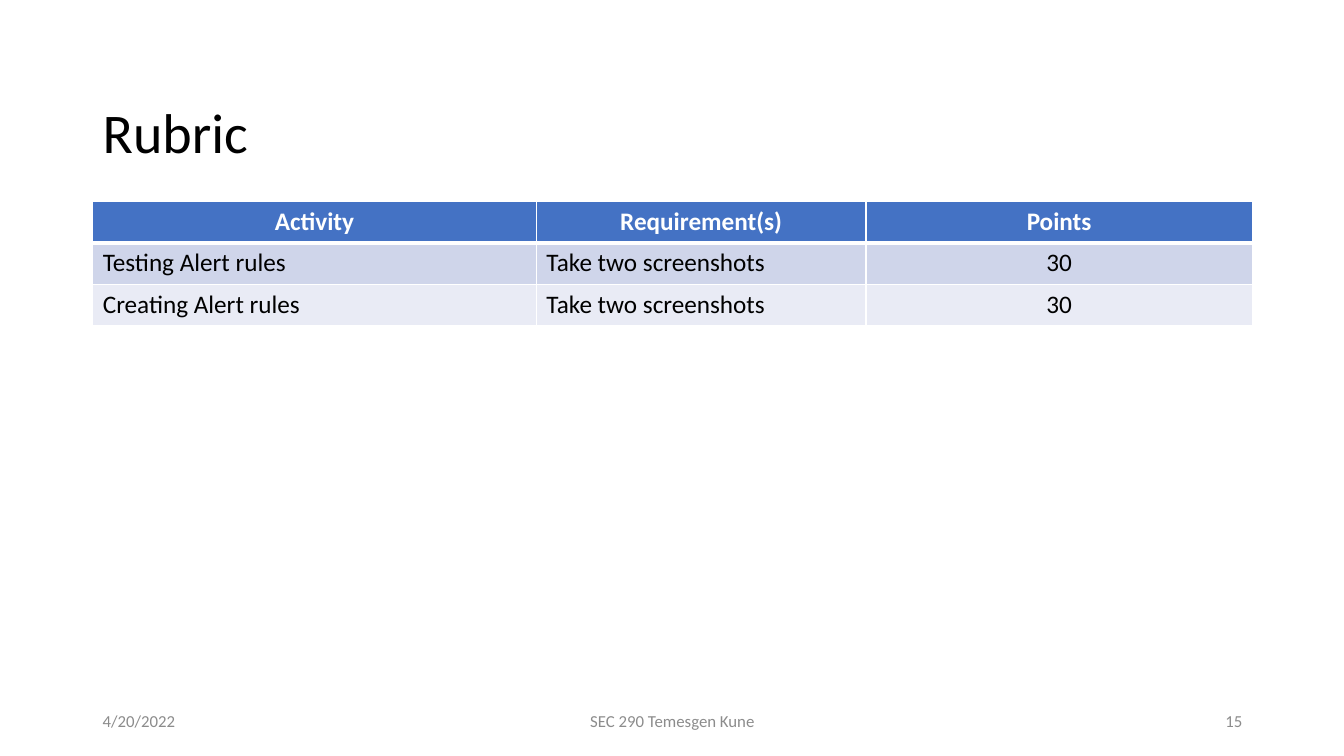
from lxml.etree import SubElement
from pptx import Presentation
from pptx.dml.color import RGBColor
from pptx.enum.text import MSO_ANCHOR, PP_ALIGN
from pptx.oxml.ns import qn
from pptx.util import Inches, Pt

WIDE, HIGH = 13.33, 7.5
EDGE, SPAN = 0.92, 11.5
COLS = (4.4, 3.27, 3.83)
ROW = 0.41
FILLS = ("4472C4", "CFD5EA", "E9EBF5")
ROWS = (
    ("Activity", "Requirement(s)", "Points"),
    ("Testing Alert rules", "Take two screenshots", "30"),
    ("Creating Alert rules", "Take two screenshots", "30"),
)
LEFT, MID, RIGHT = PP_ALIGN.LEFT, PP_ALIGN.CENTER, PP_ALIGN.RIGHT


def color(code):
    return RGBColor.from_string(code)


def write(frame, text, size, ink, align=LEFT, bold=False):
    para = frame.paragraphs[0]
    para.alignment = align
    run = para.add_run()
    run.text = text
    font = run.font
    font.name, font.size, font.bold = "Calibri", Pt(size), bold
    font.color.rgb = color(ink)
    return para


def label(slide, box, text, size, ink, align=LEFT):
    frame = slide.shapes.add_textbox(*map(Inches, box)).text_frame
    frame.word_wrap = True
    frame.vertical_anchor = MSO_ANCHOR.MIDDLE
    return write(frame, text, size, ink, align)


def border(cell, widths):
    """Draw white left, right, top and bottom lines, widths in points."""
    props = cell._tc.get_or_add_tcPr()
    for spot, (side, width) in enumerate(zip("LRTB", widths)):
        line = props.makeelement(qn(f"a:ln{side}"), {"w": str(Pt(width))})
        fill = SubElement(line, qn("a:solidFill"))
        SubElement(fill, qn("a:srgbClr"), val="FFFFFF")
        props.insert(spot, line)


def rubric(slide):
    box = (EDGE, 2, SPAN, ROW * len(ROWS))
    table = slide.shapes.add_table(
        len(ROWS), len(COLS), *map(Inches, box)).table
    for col, width in zip(table.columns, COLS):
        col.width = Inches(width)
    for r, texts in enumerate(ROWS):
        table.rows[r].height = Inches(ROW)
        head = r == 0
        for c, text in enumerate(texts):
            cell = table.cell(r, c)
            cell.fill.solid()
            cell.fill.fore_color.rgb = color(FILLS[r])
            align = MID if head or c == len(COLS) - 1 else LEFT
            ink = "FFFFFF" if head else "000000"
            write(cell.text_frame, text, 18, ink, align, head)
            border(cell, (1, 1, 3 if r == 1 else 1, 3 if head else 1))


def footer(slide):
    parts = (
        ("4/20/2022", EDGE, 3, LEFT),
        ("SEC 290 Temesgen Kune", EDGE + (SPAN - 4.5) / 2, 4.5, MID),
        ("15", EDGE + SPAN - 3, 3, RIGHT),
    )
    for text, left, width, align in parts:
        label(slide, (left, 6.95, width, 0.4), text, 12, "8C8C8C", align)


def main():
    deck = Presentation()
    deck.slide_width, deck.slide_height = Inches(WIDE), Inches(HIGH)
    slide = deck.slides.add_slide(deck.slide_layouts[6])
    title = label(slide, (EDGE, 0.83, SPAN, 1.02), "Rubric", 40, "000000")
    title.line_spacing = 0.9
    rubric(slide)
    footer(slide)
    deck.save("out.pptx")


if __name__ == "__main__":
    main()
